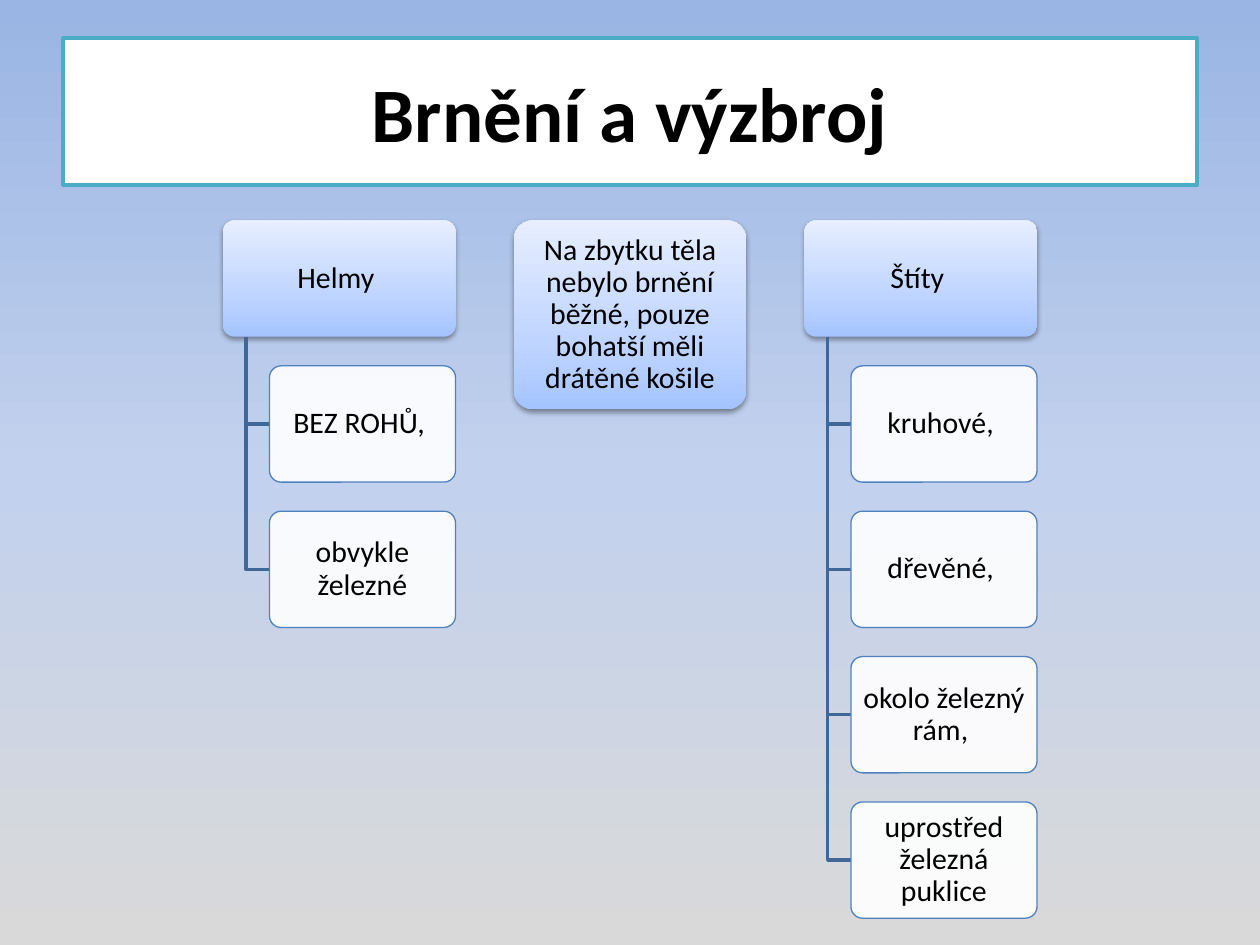
"""Build the slide on armour and weapons: a title over three hierarchy columns."""
from lxml import etree
from pptx import Presentation, util as u
from pptx.dml.color import RGBColor
from pptx.enum import shapes, text
from pptx.oxml import ns

W, H = 10, 7.5
TOP = 1.75
ROW = 0.923
COL = 2 * ROW
PITCH_X, PITCH_Y = 1.25 * COL, 1.25 * ROW
LEFT = (W - 3.5 * COL) / 2
INDENT = 0.2 * COL


def rgb(value):
    """Turn a hex string into a colour."""
    return RGBColor.from_string(value)


def gradient(fill, element, stops, angle):
    """Give a fill three or more gradient stops."""
    fill.gradient()
    fill.gradient_angle = angle
    gs_list = element.xpath(".//a:gsLst")[0]
    for gs in list(gs_list):
        gs_list.remove(gs)
    for pos, value in stops:
        gs = etree.SubElement(gs_list, ns.qn("a:gs"), pos=str(pos * 1000))
        etree.SubElement(gs, ns.qn("a:srgbClr"), val=value)


STYLES = {
    "title": {"size": 44, "bold": True, "line": "4BACC6", "weight": 2, "inset": (0.1, 0.05), "spacing": 1},
    "head": {"size": 17, "bold": False, "line": None, "weight": 0, "inset": (0.07, 0.05), "spacing": 0.9},
    "item": {"size": 17, "bold": False, "line": "4F81BD", "weight": 0.75, "inset": (0.07, 0.05), "spacing": 0.9},
}
COLUMNS = [
    ("Helmy ", 1, ["BEZ ROHŮ, ", "obvykle železné"]),
    ("Na zbytku těla nebylo brnění běžné, pouze bohatší měli drátěné košile", 1.625, []),
    ("Štíty ", 1, ["kruhové, ", "dřevěné, ", "okolo železný rám, ", "uprostřed železná puklice"]),
]

prs = Presentation()
prs.slide_width, prs.slide_height = u.Inches(W), u.Inches(H)
slide = prs.slides.add_slide(prs.slide_layouts[6])
gradient(slide.background.fill, slide.element, [(0, "9AB5E4"), (50, "C2D1ED"), (100, "D9D9D9")], 270)

boxes = [("title", "Brnění a výzbroj", 0.05 * W, 0.04 * H, 0.9 * W, 1.17)]
for col, (head, rows, items) in enumerate(COLUMNS):
    x = LEFT + col * PITCH_X
    boxes.append(("head", head, x, TOP, COL, rows * ROW))
    for row, item in enumerate(items, 1):
        boxes.append(("item", item, x + INDENT, TOP + row * PITCH_Y, COL - INDENT, ROW))

for kind, words, x, y, w, h in boxes:
    style = STYLES[kind]
    if kind == "item":
        trunk, middle = x - INDENT / 2, y + h / 2
        builder = slide.shapes.build_freeform(u.Inches(trunk), u.Inches(TOP + ROW))
        builder.add_line_segments([(u.Inches(trunk), u.Inches(middle)), (u.Inches(x), u.Inches(middle))], close=False)
        s = builder.convert_to_shape()
        s.shadow.inherit = False
        s.fill.background()
        s.line.color.rgb = rgb("3F6797")
        s.line.width = u.Pt(2)

    preset = shapes.MSO_SHAPE.RECTANGLE if kind == "title" else shapes.MSO_SHAPE.ROUNDED_RECTANGLE
    s = slide.shapes.add_shape(preset, *map(u.Inches, (x, y, w, h)))
    s.shadow.inherit = False
    if kind != "title":
        s.adjustments[0] = 0.1
    if kind == "head":
        gradient(s.fill, s.element, [(0, "A4C4FF"), (35, "BFD4FF"), (100, "E6EEFF")], 90)
        effects = s.element.xpath("./p:spPr/a:effectLst")[0]
        shadow = etree.SubElement(effects, ns.qn("a:outerShdw"), blurRad=str(u.Pt(3.1)),
                                  dist=str(u.Pt(1.6)), dir="5400000", rotWithShape="0")
        black = etree.SubElement(shadow, ns.qn("a:srgbClr"), val="000000")
        etree.SubElement(black, ns.qn("a:alpha"), val="38000")
    else:
        s.fill.solid()
        s.fill.fore_color.rgb = rgb("FFFFFF")
    if kind == "item":
        white = s.element.xpath("./p:spPr/a:solidFill/a:srgbClr")[0]
        etree.SubElement(white, ns.qn("a:alpha"), val="90000")
    if style["line"]:
        s.line.color.rgb = rgb(style["line"])
        s.line.width = u.Pt(style["weight"])
    else:
        s.line.fill.background()

    tf = s.text_frame
    inset_x, inset_y = map(u.Inches, style["inset"])
    frame = {"word_wrap": True, "vertical_anchor": text.MSO_ANCHOR.MIDDLE, "margin_left": inset_x,
             "margin_right": inset_x, "margin_top": inset_y, "margin_bottom": inset_y}
    for name, value in frame.items():
        setattr(tf, name, value)
    p = tf.paragraphs[0]
    p.alignment, p.line_spacing = text.PP_ALIGN.CENTER, style["spacing"]
    r = p.add_run()
    r.text = words
    for name, value in {"name": "Calibri", "size": u.Pt(style["size"]), "bold": style["bold"]}.items():
        setattr(r.font, name, value)
    r.font.color.rgb = rgb("000000")

prs.save("out.pptx")
